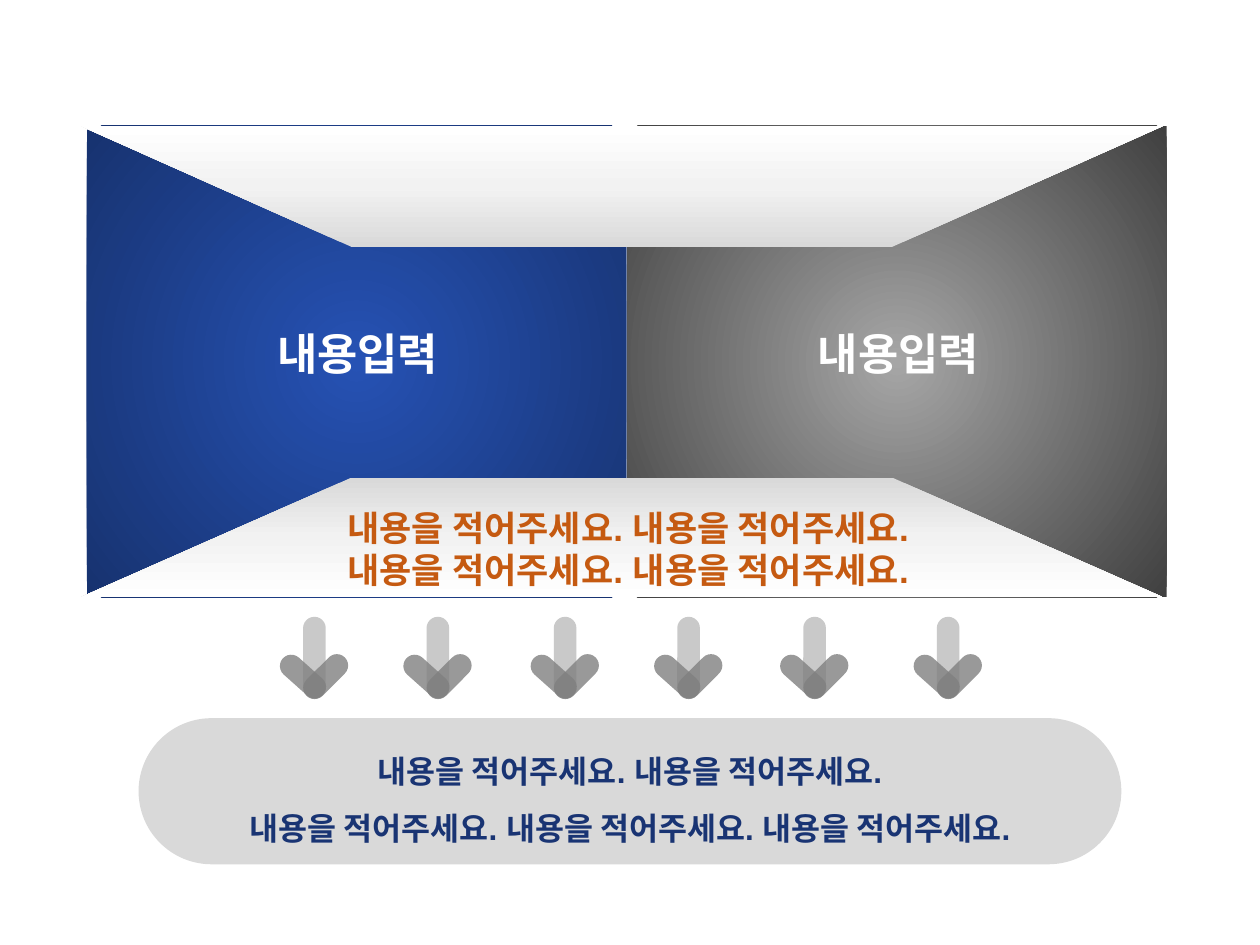
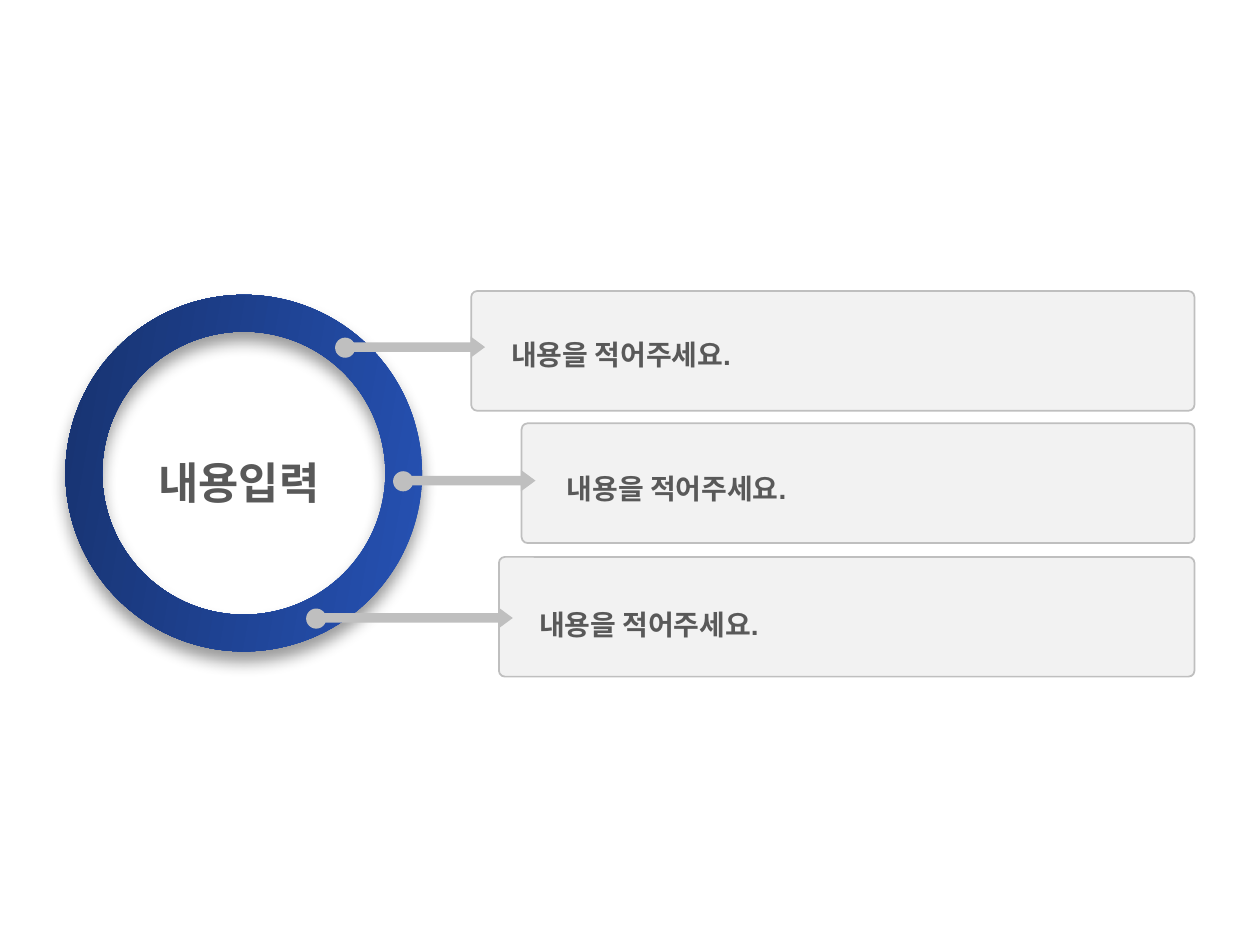
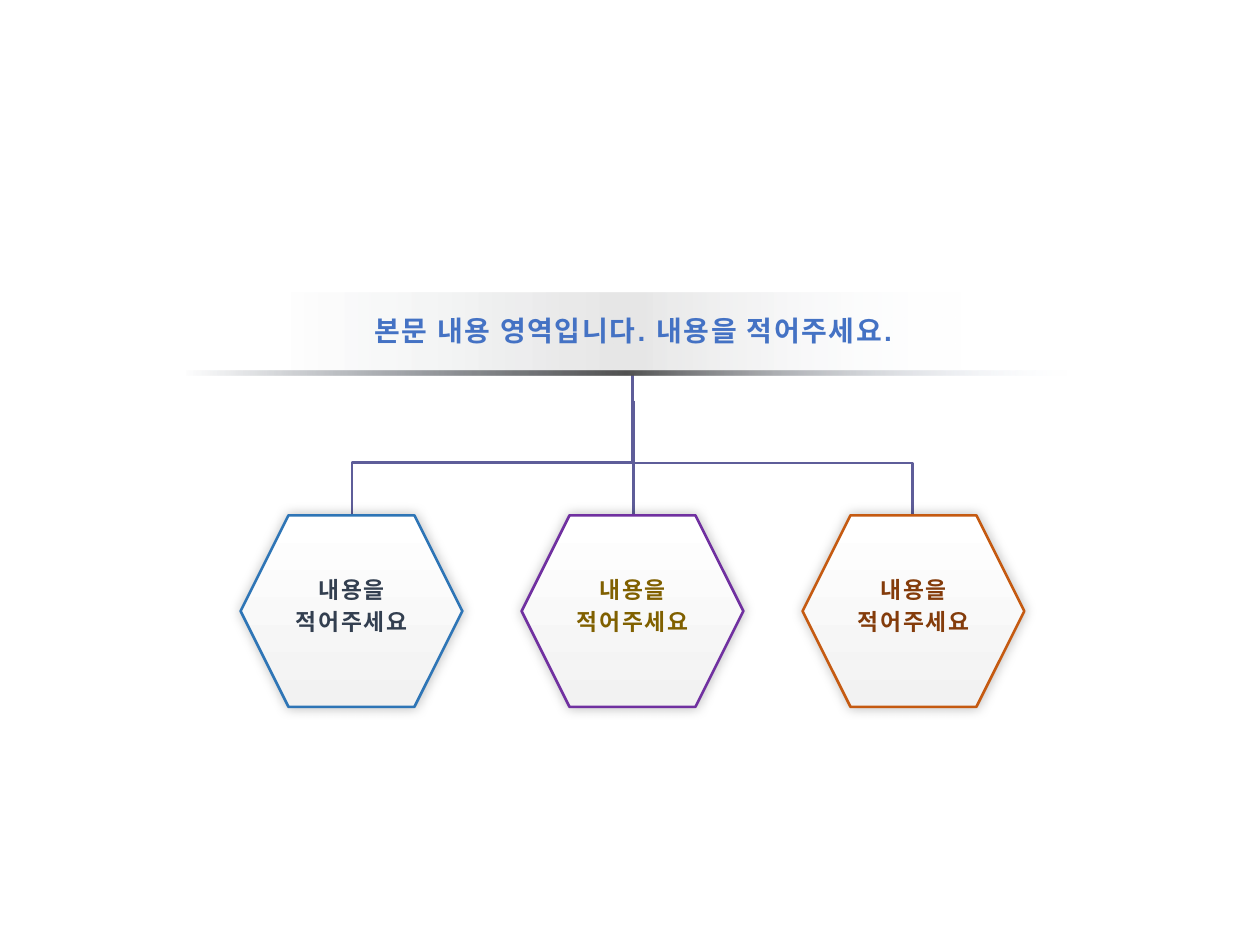
from lxml import etree
from pptx import Presentation
from pptx.dml.color import RGBColor
from pptx.enum.shapes import MSO_CONNECTOR, MSO_SHAPE
from pptx.enum.text import MSO_AUTO_SIZE, PP_ALIGN
from pptx.oxml import parse_xml
from pptx.oxml.ns import nsdecls, qn
from pptx.util import Inches, Pt

RECTANGLE = MSO_SHAPE.RECTANGLE
ROUNDED = MSO_SHAPE.ROUNDED_RECTANGLE
OVAL = MSO_SHAPE.OVAL
DONUT = MSO_SHAPE.DONUT
HEXAGON = MSO_SHAPE.HEXAGON
RIGHT_ARROW = MSO_SHAPE.RIGHT_ARROW
ELBOW = MSO_CONNECTOR.ELBOW
STRAIGHT = MSO_CONNECTOR.STRAIGHT
LEFT = PP_ALIGN.LEFT
CENTER = PP_ALIGN.CENTER
FIT_TEXT = MSO_AUTO_SIZE.SHAPE_TO_FIT_TEXT

FONT = "Arial"
BLACK = RGBColor(0x00, 0x00, 0x00)
WHITE = RGBColor(0xFF, 0xFF, 0xFF)
PALE_GRAY = RGBColor(0xF2, 0xF2, 0xF2)
LIGHT_GRAY = RGBColor(0xD9, 0xD9, 0xD9)
SILVER = RGBColor(0xBF, 0xBF, 0xBF)
MID_GRAY = RGBColor(0xA6, 0xA6, 0xA6)
GRAY = RGBColor(0x80, 0x80, 0x80)
TEXT_GRAY = RGBColor(0x59, 0x59, 0x59)
RULE_GRAY = RGBColor(0x52, 0x52, 0x52)
DARK_GRAY = RGBColor(0x40, 0x40, 0x40)
BLUE = RGBColor(0x26, 0x52, 0xB4)
NAVY = RGBColor(0x17, 0x32, 0x6F)
TEXT_NAVY = RGBColor(0x19, 0x34, 0x73)
SLATE = RGBColor(0x33, 0x3F, 0x50)
ICE = RGBColor(0xE1, 0xEB, 0xFB)
SKY = RGBColor(0x44, 0x72, 0xC4)
STEEL = RGBColor(0x2E, 0x75, 0xB6)
VIOLET = RGBColor(0x5E, 0x5D, 0x99)
PURPLE = RGBColor(0x70, 0x30, 0xA0)
ORANGE = RGBColor(0xC5, 0x5A, 0x11)
OLIVE = RGBColor(0x80, 0x60, 0x00)
BROWN = RGBColor(0x84, 0x3C, 0x0B)

HEADING = "내용입력"
SENTENCE = "내용을 적어주세요."


def style(shape, stops, angle=None, line=None, line_width=1, shadow=None):
    """Fill with (position, colour, opacity) stops: one is solid, no angle is radial."""
    colors = [
        f'<a:srgbClr val="{color}"><a:alpha val="{opacity * 1000}"/></a:srgbClr>'
        for _, color, opacity in stops
    ]
    if len(stops) == 1:
        fill_xml = f'<a:solidFill {nsdecls("a")}>{colors[0]}</a:solidFill>'
    else:
        marks = "".join(
            f'<a:gs pos="{stop[0] * 1000}">{color}</a:gs>'
            for stop, color in zip(stops, colors)
        )
        if angle is None:
            direction = ('<a:path path="circle"><a:fillToRect l="50000" t="50000" '
                         'r="50000" b="50000"/></a:path>')
        else:
            direction = f'<a:lin ang="{angle * 60000}" scaled="0"/>'
        fill_xml = (f'<a:gradFill {nsdecls("a")} rotWithShape="1">'
                    f'<a:gsLst>{marks}</a:gsLst>{direction}</a:gradFill>')
    shape.fill.solid()
    properties = shape._element.spPr
    properties.replace(properties.find(qn("a:solidFill")), parse_xml(fill_xml))

    if line is None:
        shape.line.fill.background()
    else:
        shape.line.color.rgb = line
        shape.line.width = Pt(line_width)

    shape.shadow.inherit = False
    if shadow:
        opacity, blur, distance, direction = shadow
        properties.find(qn("a:effectLst")).append(parse_xml(
            f'<a:outerShdw {nsdecls("a")} blurRad="{Pt(blur)}" dist="{Pt(distance)}" '
            f'dir="{direction * 60000}" algn="ctr" rotWithShape="0">'
            f'<a:srgbClr val="{BLACK}"><a:alpha val="{opacity * 1000}"/></a:srgbClr>'
            '</a:outerShdw>'))


def add_text(slide, box, lines, size, color, spacing=1.0, align=CENTER, tracking=0):
    frame = slide.shapes.add_textbox(*map(Inches, box)).text_frame
    frame.word_wrap = True
    frame.auto_size = FIT_TEXT
    for index, line in enumerate(lines):
        paragraph = frame.paragraphs[0] if index == 0 else frame.add_paragraph()
        paragraph.alignment = align
        paragraph.line_spacing = spacing
        run = paragraph.add_run()
        run.text = line
        run.font.name = FONT
        run.font.size = Pt(size)
        run.font.bold = True
        run.font.color.rgb = color
        if tracking:
            run._r.get_or_add_rPr().set("spc", str(tracking * 100))


presentation = Presentation()
presentation.slide_width = Inches(10)
presentation.slide_height = Inches(7.5)
blank_layout = presentation.slide_layouts[6]

# Slide 1: room with two walls, arrows and a conclusion
slide = presentation.slides.add_slide(blank_layout)
for left, inner, outer in [(0.69, BLUE, NAVY), (4.98, MID_GRAY, DARK_GRAY)]:
    wall = slide.shapes.add_shape(
        RECTANGLE, Inches(left), Inches(1), Inches(4.28), Inches(3.74))
    style(wall, [(0, inner, 100), (100, outer, 100)])
    add_text(slide, (left + 0.12, 2.57, 4.06, 0.49), [HEADING], 25, WHITE, Pt(28))

# Floor and ceiling fade towards the viewer
for inner_y, outer_y, angle in [(3.79, 4.74, 90), (1.96, 1, 270)]:
    builder = slide.shapes.build_freeform(Inches(2.79), Inches(inner_y))
    builder.add_line_segments([
        (Inches(x), Inches(y))
        for x, y in [(7.08, inner_y), (9.23, outer_y), (0.64, outer_y)]
    ])
    style(builder.convert_to_shape(),
          [(0, LIGHT_GRAY, 100), (50, PALE_GRAY, 100), (100, WHITE, 100)], angle)
add_text(slide, (0.72, 3.97, 8.53, 0.77), [f"{SENTENCE} {SENTENCE}"] * 2,
         20, ORANGE, Pt(24))

# Down arrows: stem, right arm, left arm
arrow_parts = [
    (0, 5.13, 0.65, 270, MID_GRAY, 60),
    (0.2, 5.28, 0.43, 315, GRAY, 80),
    (0.02, 5.28, 0.43, 41.8, GRAY, 80),
]
for arrow_left in [2.17, 3.15, 4.16, 5.14, 6.14, 7.2]:
    for offset, top, length, rotation, color, opacity in arrow_parts:
        part = slide.shapes.add_shape(
            ROUNDED, Inches(arrow_left + offset), Inches(top),
            Inches(length), Inches(0.18))
        part.adjustments[0] = 0.5
        part.rotation = rotation
        style(part, [(0, color, opacity)])

conclusion = slide.shapes.add_shape(
    ROUNDED, Inches(1.1), Inches(5.7), Inches(7.8), Inches(1.16))
conclusion.adjustments[0] = 0.5
style(conclusion, [(0, LIGHT_GRAY, 100)])
add_text(slide, (1.1, 5.77, 7.8, 1.01),
         [" ".join([SENTENCE] * count) for count in (2, 3)], 18, TEXT_NAVY, 1.5)

# Slide 2: ring with three branches
slide = presentation.slides.add_slide(blank_layout)
ring = slide.shapes.add_shape(
    DONUT, Inches(0.52), Inches(2.34), Inches(2.83), Inches(2.83))
ring.adjustments[0] = 0.103
style(ring, [(0, BLUE, 100), (100, NAVY, 100)], 190, shadow=(40, 9, 6, 90))
add_text(slide, (1.16, 3.36, 1.75, 0.65), [HEADING], 25, TEXT_GRAY, 1.5, LEFT)

# Card left and top, arrow left and top, dot left, text left and top
branches = [
    (3.74, 2.31, 2.75, 2.67, 2.66, 3.96, 2.5),
    (4.14, 3.36, 3.26, 3.73, 3.12, 4.4, 3.56),
    (3.96, 4.42, 2.5, 4.82, 2.43, 4.18, 4.64),
]
for card_left, card_top, arrow_left, arrow_top, dot_left, text_left, text_top in branches:
    card = slide.shapes.add_shape(
        ROUNDED, Inches(card_left), Inches(card_top),
        Inches(9.48 - card_left), Inches(0.95))
    card.adjustments[0] = 0.05
    style(card, [(0, PALE_GRAY, 100)], line=SILVER)
    arrow = slide.shapes.add_shape(
        RIGHT_ARROW, Inches(arrow_left), Inches(arrow_top),
        Inches(card_left + 0.11 - arrow_left), Inches(0.17))
    arrow.adjustments[0] = 0.441
    arrow.adjustments[1] = 0.676
    style(arrow, [(0, SILVER, 100)])
    dot = slide.shapes.add_shape(
        OVAL, Inches(dot_left), Inches(arrow_top + 0.01), Inches(0.16), Inches(0.16))
    style(dot, [(0, SILVER, 100)])
    add_text(slide, (text_left, text_top, 5.5, 0.45), [SENTENCE],
             16, TEXT_GRAY, 1.5, LEFT)

# Slide 3: banner above three hexagons
slide = presentation.slides.add_slide(blank_layout)

# Connectors: ends before rotation, rotation, bend position
links = [
    (ELBOW, (4.94, 5.27, 7.32, 3.05), 270, 70400),
    (ELBOW, (5.1, 5.28, 2.72, 3.05), 90, 70700),
    (STRAIGHT, (5.03, 3.18, 5.03, 4.56), 0, None),
]
for kind, ends, rotation, bend in links:
    link = slide.shapes.add_connector(kind, *map(Inches, ends))
    link.line.color.rgb = VIOLET
    link.line.width = Pt(1.5)
    properties = link._element.spPr
    etree.SubElement(properties, qn("a:effectLst"))
    if bend:
        properties.find(qn("a:xfrm")).set("rot", str(rotation * 60000))
        guides = properties.find(qn("a:prstGeom")).find(qn("a:avLst"))
        etree.SubElement(guides, qn("a:gd"), name="adj1", fmla=f"val {bend}")

# Banner and the rule below it
for box, color, opacity in [((2.26, 2.32, 5.42, 0.61), BLACK, 10),
                            ((1.47, 2.94, 7, 0.04), RULE_GRAY, 100)]:
    band = slide.shapes.add_shape(RECTANGLE, *map(Inches, box))
    style(band, [(0, SLATE, 0), (50, color, opacity), (100, ICE, 0)], 0)
add_text(slide, (1.79, 2.44, 6.47, 0.37), [f"본문 내용 영역입니다. {SENTENCE}"],
         16, SKY, tracking=1)

# Hexagons
for index, (outline, text_color) in enumerate(
        [(STEEL, SLATE), (PURPLE, OLIVE), (ORANGE, BROWN)]):
    left = 1.91 + 2.23 * index
    hexagon = slide.shapes.add_shape(
        HEXAGON, Inches(left), Inches(4.09), Inches(1.76), Inches(1.52))
    style(hexagon, [(0, WHITE, 100), (100, PALE_GRAY, 100)], 90,
          outline, 1.5, (25, 7, 0, 0))
    add_text(slide, (left + 0.02, 4.49, 1.72, 0.61), ["내용을", "적어주세요"],
             13, text_color, Pt(18), tracking=1)

presentation.save("out.pptx")
